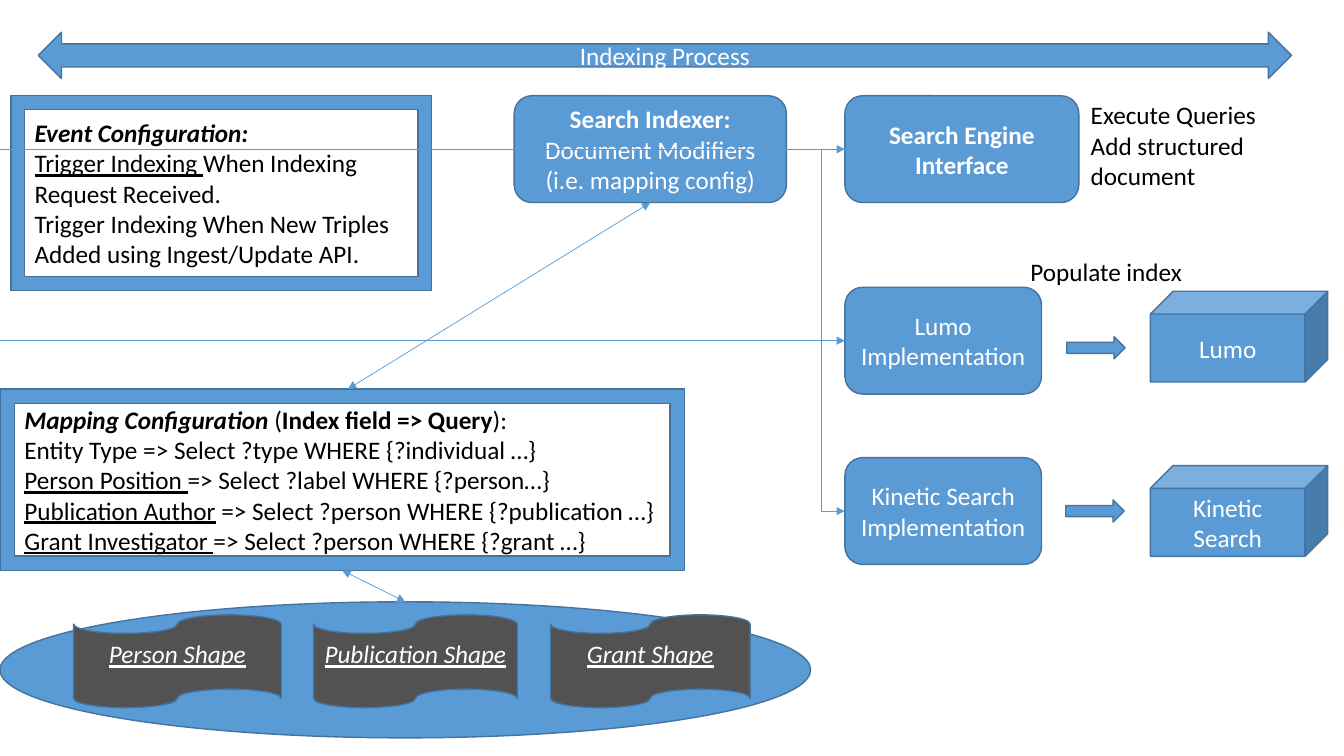
"""Build the indexing process architecture slide."""
from lxml import etree
from pptx import Presentation
from pptx.dml.color import RGBColor
from pptx.enum.shapes import MSO_CONNECTOR, MSO_SHAPE
from pptx.enum.text import MSO_ANCHOR, PP_ALIGN
from pptx.oxml.ns import qn
from pptx.util import Inches, Pt

ROUNDED = MSO_SHAPE.ROUNDED_RECTANGLE
FRAME = MSO_SHAPE.FRAME
CUBE = MSO_SHAPE.CUBE
TAPE = MSO_SHAPE.FLOWCHART_PUNCHED_TAPE
OVAL = MSO_SHAPE.OVAL
RIGHT_ARROW = MSO_SHAPE.RIGHT_ARROW
DOUBLE_ARROW = MSO_SHAPE.LEFT_RIGHT_ARROW
STRAIGHT, ELBOW = MSO_CONNECTOR.STRAIGHT, MSO_CONNECTOR.ELBOW
TOP, MIDDLE = MSO_ANCHOR.TOP, MSO_ANCHOR.MIDDLE
LEFT, CENTER = PP_ALIGN.LEFT, PP_ALIGN.CENTER
TOP_SITE, LEFT_SITE, BOTTOM_SITE, RIGHT_SITE = range(4)

BLUE, EDGE, GRAY = "5B9BD5", "43739E", "525252"
BLACK, WHITE = "000000", "FFFFFF"

EVENT_TEXT = [
    [("Event Configuration:", "bi")],
    [("Trigger Indexing ", "u"), ("When Indexing Request Received.", "")],
    [("Trigger Indexing When New Triples Added using Ingest/Update API.", "")],
]
MAPPING_TEXT = [
    [("Mapping Configuration ", "bi"), ("(", ""), ("Index field => Query", "b"), ("):", "")],
    [("Entity Type => Select ?type WHERE {?individual …}", "")],
    [("Person Position ", "u"), ("=> Select ?label WHERE {?person…}", "")],
    [("Publication Author", "u"), (" => Select ?person WHERE {?publication …}", "")],
    [("Grant Investigator ", "u"), ("=> Select ?person WHERE {?grant …}", "")],
]
INDEXER_TEXT = [
    [("Search Indexer:", "b")],
    [("Document Modifiers (i.e. mapping config)", "")],
]
QUERY_TEXT = [[("Execute Queries", "")], [("Add structured document", "")]]
TAPES = [("Person Shape", 0.73, 2.06), ("Publication Shape", 3.11, 2.02), ("Grant Shape", 5.46, 1.98)]
ENGINES = [("Lumo", 2.85, 2.89, (10.58, 3.34)), ("Kinetic Search", 4.54, 4.62, (10.57, 4.96))]

ENGINE_LEFT, BOX_HEIGHT = 8.38, 1.06
ELBOW_WIDTH = 0.02
ELBOWS = [(3.38, -0.05), (5.07, 8.15)]
INTERFACE_MIDDLE = 1.48


def color(value):
    return RGBColor.from_string(value)


def write(shape, paragraphs, font_color, align, anchor):
    frame = shape.text_frame
    frame.word_wrap = True
    frame.vertical_anchor = anchor
    for index, runs in enumerate(paragraphs):
        paragraph = frame.paragraphs[0] if index == 0 else frame.add_paragraph()
        paragraph.alignment = align
        paragraph.font.size = Pt(18)
        paragraph.font.name = "Calibri"
        paragraph.font.color.rgb = color(font_color)
        for text, style in runs:
            run = paragraph.add_run()
            run.text = text
            run.font.size = Pt(18)
            run.font.name = "Calibri"
            run.font.color.rgb = color(font_color)
            run.font.bold = "b" in style
            run.font.italic = "i" in style
            run.font.underline = "u" in style


def add_block(slide, kind, box, paragraphs=(), fill=BLUE, font_color=WHITE,
              align=CENTER, anchor=MIDDLE, adjustment=None):
    shape = slide.shapes.add_shape(kind, *map(Inches, box))
    shape.shadow.inherit = False
    shape.fill.solid()
    shape.fill.fore_color.rgb = color(fill)
    shape.line.color.rgb = color(EDGE)
    shape.line.width = Pt(1)
    if adjustment is not None:
        shape.adjustments[0] = adjustment
    write(shape, paragraphs, font_color, align, anchor)
    return shape


def add_label(slide, box, paragraphs, wrap=True):
    label = slide.shapes.add_textbox(*map(Inches, box))
    write(label, paragraphs, BLACK, LEFT, TOP)
    label.text_frame.word_wrap = wrap


def add_line(slide, kind, start, end, both_ends=False):
    connector = slide.shapes.add_connector(kind, *map(Inches, start + end))
    connector.line.color.rgb = color(BLUE)
    connector.line.width = Pt(0.5)
    properties = connector._element.spPr
    line = properties.find(qn("a:ln"))
    for tag in ("a:headEnd", "a:tailEnd") if both_ends else ("a:tailEnd",):
        etree.SubElement(line, qn(tag), type="triangle")
    etree.SubElement(properties, qn("a:effectLst"))
    return connector


def add_elbow(slide, start, end, bend_x):
    connector = add_line(slide, ELBOW, start, end)
    ratio = (start[0] - bend_x) / (start[0] - end[0])
    geometry = connector._element.spPr.find(qn("a:prstGeom"))
    guides = geometry.find(qn("a:avLst"))
    etree.SubElement(guides, qn("a:gd"), name="adj1", fmla=f"val {round(ratio * 100000)}")


def main():
    presentation = Presentation()
    presentation.slide_width = Inches(13.33)
    presentation.slide_height = Inches(7.5)
    slide = presentation.slides.add_slide(presentation.slide_layouts[6])

    add_block(slide, DOUBLE_ARROW, (0.38, 0.32, 12.43, 0.46), [[("Indexing Process", "")]])
    add_block(slide, FRAME, (0.11, 0.95, 4.17, 1.93), EVENT_TEXT,
              font_color=BLACK, align=LEFT, adjustment=0.07)
    mapping = add_block(slide, FRAME, (0, 3.86, 6.79, 1.8), MAPPING_TEXT,
                        font_color=BLACK, align=LEFT, adjustment=0.08)
    ellipse = add_block(slide, OVAL, (0, 5.97, 8.04, 1.35))
    for name, left, width in TAPES:
        add_block(slide, TAPE, (left, 6.1, width, 0.92), [[(name, "iu")]], fill=GRAY, anchor=TOP)

    indexer = add_block(slide, ROUNDED, (5.1, 0.95, 2.7, BOX_HEIGHT), INDEXER_TEXT)
    interface = add_block(slide, ROUNDED, (ENGINE_LEFT, 0.95, 2.32, BOX_HEIGHT),
                          [[("Search Engine Interface", "b")]])
    for name, box_top, cube_top, arrow in ENGINES:
        add_block(slide, ROUNDED, (ENGINE_LEFT, box_top, 1.95, BOX_HEIGHT),
                  [[(name + " Implementation", "")]])
        add_block(slide, CUBE, (11.41, cube_top, 1.76, 0.9), [[(name, "")]])
        add_block(slide, RIGHT_ARROW, arrow + (0.58, 0.22))

    link = add_line(slide, STRAIGHT, (7.8, INTERFACE_MIDDLE), (ENGINE_LEFT, INTERFACE_MIDDLE))
    link.begin_connect(indexer, RIGHT_SITE)
    link.end_connect(interface, LEFT_SITE)
    for end_y, bend_x in ELBOWS:
        add_elbow(slide, (ENGINE_LEFT + ELBOW_WIDTH, INTERFACE_MIDDLE), (ENGINE_LEFT, end_y), bend_x)
    link = add_line(slide, STRAIGHT, (6.45, 2.01), (3.45, 3.86), both_ends=True)
    link.begin_connect(indexer, BOTTOM_SITE)
    link = add_line(slide, STRAIGHT, (3.4, 5.66), (4.02, 5.97), both_ends=True)
    link.begin_connect(mapping, BOTTOM_SITE)
    link.end_connect(ellipse, TOP_SITE)

    add_label(slide, (10.12, 2.49, 1.72, 0.4), [[("Populate index", "")]], wrap=False)
    add_label(slide, (10.72, 0.94, 2.46, 1.01), QUERY_TEXT)
    presentation.save("out.pptx")


if __name__ == "__main__":
    main()
